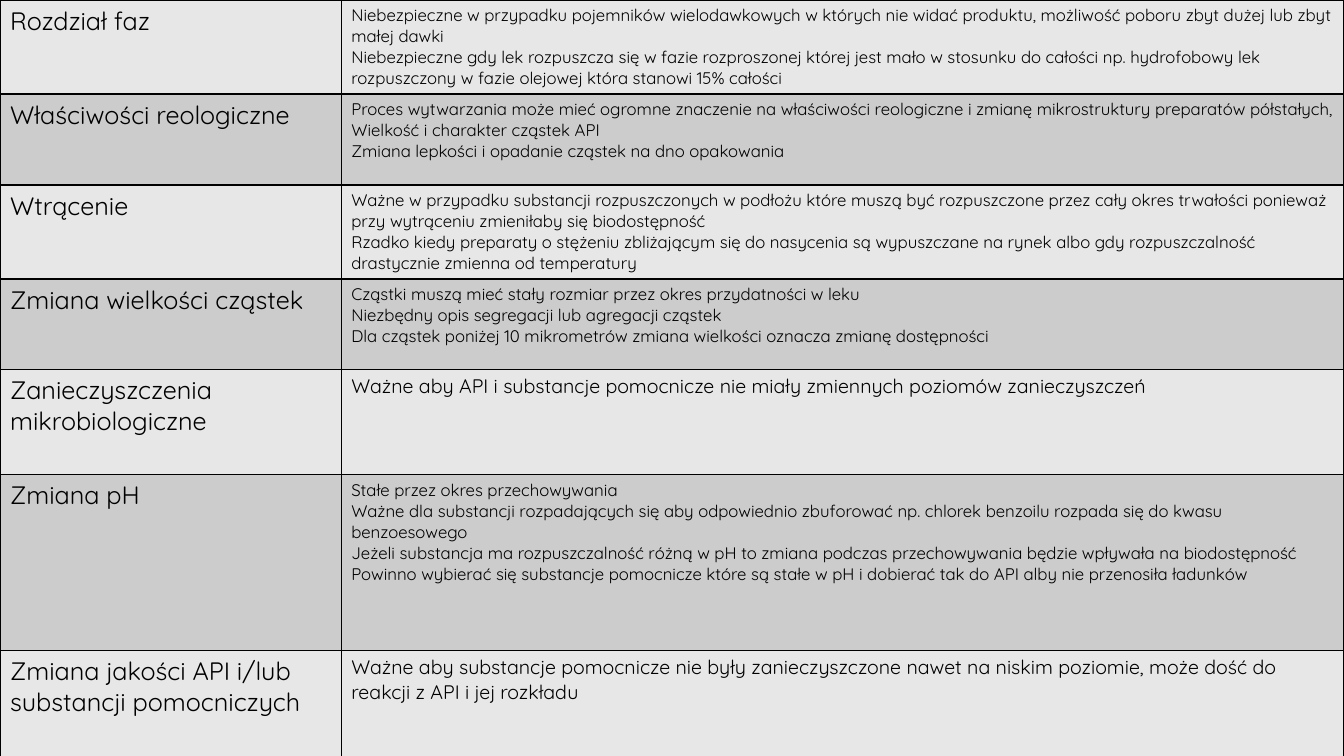
from copy import deepcopy
from dataclasses import dataclass

from lxml.etree import SubElement
from pptx import Presentation
from pptx.dml.color import RGBColor
from pptx.oxml.ns import qn
from pptx.util import Cm, Pt


@dataclass(frozen=True)
class Theme:
    font: str = "Quicksand"
    text: str = "000000"
    border: str = "000000"
    bands: tuple = ("E7E7E7", "CCCCCC")
    backdrop: tuple = ((0, "FFFFFF"), (0.5, "FBFBFB"), (1, "D1D1D1"))
    heading: int = 18
    body: int = 14
    small: int = 12
    line: int = 1


THEME = Theme()
WIDTH, HEIGHT = 33.87, 19.05
COLUMNS = (8.6, 25.27)

# Row height, topic, size of the details, details
ROWS = (
    (2.37, "Rozdział faz", THEME.small, (
        "Niebezpieczne w przypadku pojemników wielodawkowych w których nie widać "
        "produktu, możliwość poboru zbyt dużej lub zbyt małej dawki",
        "Niebezpieczne gdy lek rozpuszcza się w fazie rozproszonej której jest mało "
        "w stosunku do całości np. hydrofobowy lek rozpuszczony w fazie olejowej "
        "która stanowi 15% całości")),
    (2.29, "Właściwości reologiczne", THEME.small, (
        "Proces wytwarzania może mieć ogromne znaczenie na właściwości reologiczne "
        "i zmianę mikrostruktury preparatów półstałych,",
        "Wielkość i charakter cząstek API",
        "Zmiana lepkości i opadanie cząstek na dno opakowania")),
    (2.37, "Wtrącenie", THEME.small, (
        "Ważne w przypadku substancji rozpuszczonych w podłożu które muszą być "
        "rozpuszczone przez cały okres trwałości ponieważ przy wytrąceniu "
        "zmieniłaby się biodostępność",
        "Rzadko kiedy preparaty o stężeniu zbliżającym się do nasycenia są "
        "wypuszczane na rynek albo gdy rozpuszczalność drastycznie zmienna od "
        "temperatury")),
    (2.27, "Zmiana wielkości cząstek", THEME.small, (
        "Cząstki muszą mieć stały rozmiar przez okres przydatności w leku",
        "Niezbędny opis segregacji lub agregacji cząstek",
        "Dla cząstek poniżej 10 mikrometrów zmiana wielkości oznacza zmianę "
        "dostępności")),
    (2.65, "Zanieczyszczenia mikrobiologiczne", THEME.body, (
        "Ważne aby API i substancje pomocnicze nie miały zmiennych poziomów "
        "zanieczyszczeń",)),
    (4.43, "Zmiana pH", THEME.small, (
        "Stałe przez okres przechowywania",
        "Ważne dla substancji rozpadających się aby odpowiednio zbuforować np. "
        "chlorek benzoilu rozpada się do kwasu benzoesowego",
        "Jeżeli substancja ma rozpuszczalność różną w pH to zmiana podczas "
        "przechowywania będzie wpływała na biodostępność",
        "Powinno wybierać się substancje pomocnicze które są stałe w pH i dobierać "
        "tak do API alby nie przenosiła ładunków")),
    (2.87, "Zmiana jakości API i/lub substancji pomocniczych", THEME.body, (
        "Ważne aby substancje pomocnicze nie były zanieczyszczone nawet na niskim "
        "poziomie, może dość do reakcji z API i jej rozkładu",)),
)


def set_background(s):
    fill = s.background.fill
    fill.gradient()
    fill.gradient_angle = 270
    stops = s.element.find(".//" + qn("a:gsLst"))
    stops.insert(1, deepcopy(stops[0]))
    for stop, (position, color) in zip(fill.gradient_stops, THEME.backdrop):
        stop.position = position
        stop.color.rgb = RGBColor.from_string(color)


def set_borders(cell):
    tc_pr = cell._tc.get_or_add_tcPr()
    for side in ("lnL", "lnR", "lnT", "lnB"):
        ln = SubElement(tc_pr, qn(f"a:{side}"), w=str(Pt(THEME.line)))
        solid = SubElement(ln, qn("a:solidFill"))
        SubElement(solid, qn("a:srgbClr"), val=THEME.border)


def fill_cell(cell, lines, size, color):
    # Borders come before the fill in the cell properties
    set_borders(cell)
    cell.fill.solid()
    cell.fill.fore_color.rgb = RGBColor.from_string(color)
    tf = cell.text_frame
    tf.text = "\n".join(lines)
    for p in tf.paragraphs:
        for r in p.runs:
            r.font.name = THEME.font
            r.font.size = Pt(size)
            r.font.color.rgb = RGBColor.from_string(THEME.text)


def add_stability_table(s):
    total = sum(row[0] for row in ROWS)
    sp = s.shapes.add_table(len(ROWS), len(COLUMNS), Cm(0), Cm(0), Cm(WIDTH), Cm(total))
    table = sp.table
    table.first_row = False
    table.horz_banding = False
    for column, width in zip(table.columns, COLUMNS):
        column.width = Cm(width)
    for i, (height, topic, size, details) in enumerate(ROWS):
        table.rows[i].height = Cm(height)
        band = THEME.bands[i % 2]
        fill_cell(table.cell(i, 0), (topic,), THEME.heading, band)
        fill_cell(table.cell(i, 1), details, size, band)


def main():
    prs = Presentation()
    prs.slide_width, prs.slide_height = Cm(WIDTH), Cm(HEIGHT)
    s = prs.slides.add_slide(prs.slide_layouts[6])
    set_background(s)
    add_stability_table(s)
    prs.save("out.pptx")


if __name__ == "__main__":
    main()
